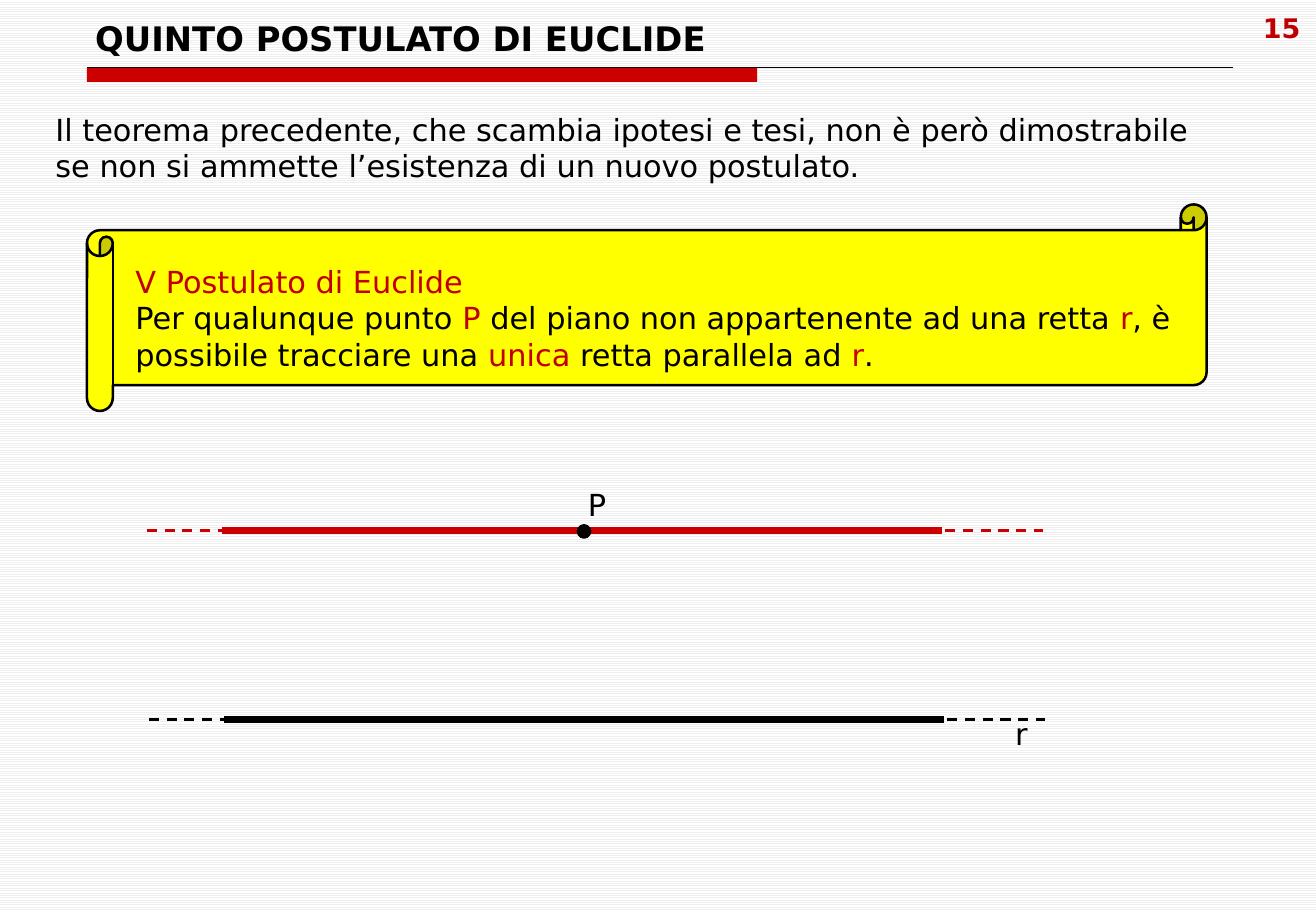
from dataclasses import dataclass

from lxml import etree
from pptx import Presentation
from pptx.dml.color import RGBColor
from pptx.enum.dml import MSO_LINE, MSO_PATTERN
from pptx.enum.shapes import MSO_CONNECTOR, MSO_SHAPE
from pptx.enum.text import MSO_ANCHOR, MSO_AUTO_SIZE, PP_ALIGN
from pptx.oxml.ns import qn
from pptx.util import Pt

EMU_PER_PX = 7620
DASH = MSO_LINE.DASH
STRAIGHT = MSO_CONNECTOR.STRAIGHT
RECTANGLE, OVAL = MSO_SHAPE.RECTANGLE, MSO_SHAPE.OVAL
SCROLL = MSO_SHAPE.HORIZONTAL_SCROLL
LEFT, CENTER = PP_ALIGN.LEFT, PP_ALIGN.CENTER
TOP, BOTTOM = MSO_ANCHOR.TOP, MSO_ANCHOR.BOTTOM


@dataclass(frozen=True)
class Theme:
    """Colours, font and type sizes of the deck."""
    font: str = "DejaVu Sans"
    ink: str = "000000"
    red: str = "CC0000"
    dark_red: str = "C00000"
    yellow: str = "FFFF00"
    paper: str = "FFFFFF"
    stripe: str = "EEEEEE"
    title: int = 20
    body: int = 18
    number: int = 16
    thin: float = 0.5
    medium: float = 1.5
    thick: float = 4.5


THEME = Theme()


def px(*lengths):
    """Turn px lengths into EMU."""
    return [length * EMU_PER_PX for length in lengths]


def rgb(colour):
    """Turn a hex string into a colour."""
    return RGBColor.from_string(colour)


def write(frame, paragraphs, size=THEME.body, bold=False, align=LEFT,
          anchor=TOP, wrap=True):
    """Fill a text frame with paragraphs of (text, colour) runs."""
    frame.word_wrap = wrap
    frame.auto_size = MSO_AUTO_SIZE.NONE
    frame.vertical_anchor = anchor
    for index, runs in enumerate(paragraphs):
        paragraph = frame.add_paragraph() if index else frame.paragraphs[0]
        paragraph.alignment = align
        for text, colour in runs:
            run = paragraph.add_run()
            run.text = text
            run.font.name = THEME.font
            run.font.size = Pt(size)
            run.font.bold = bold
            run.font.color.rgb = rgb(colour)


def add_text(slide, box, paragraphs, **style):
    """Place a text box."""
    write(slide.shapes.add_textbox(*px(*box)).text_frame, paragraphs, **style)


def add_filled(slide, kind, box, fill, outline=None):
    """Place a filled preset shape, outlined if a colour is given."""
    shape = slide.shapes.add_shape(kind, *px(*box))
    shape.shadow.inherit = False
    shape.fill.solid()
    shape.fill.fore_color.rgb = rgb(fill)
    if outline:
        shape.line.color.rgb = rgb(outline)
        shape.line.width = Pt(THEME.medium)
    else:
        shape.line.fill.background()


def add_rule(slide, left, right, y, colour, width, dash=None):
    """Draw a horizontal line."""
    rule = slide.shapes.add_connector(STRAIGHT, *px(left, y, right, y))
    rule.line.color.rgb = rgb(colour)
    rule.line.width = Pt(width)
    if dash:
        rule.line.dash_style = dash
    etree.SubElement(rule._element.spPr, qn("a:effectLst"))


def header(slide, box, title, number):
    """Place the title, the bar under it and the page number."""
    left, top, width, height = box
    bar_top = top + height
    add_rule(slide, left, left + width, bar_top, THEME.ink, THEME.thin)
    add_filled(slide, RECTANGLE, (left, bar_top, 662, 14), THEME.red)
    heading = slide.shapes.title
    heading.left, heading.top, heading.width, heading.height = px(
        left - 4, top + 12, width + 6, height - 15)
    write(heading.text_frame, [[(title, THEME.ink)]], size=THEME.title,
          bold=True, anchor=BOTTOM)
    add_text(slide, (left + width + 14, top, 68, 62),
             [[(number, THEME.dark_red)]], size=THEME.number, bold=True,
             align=CENTER)


def postulate(slide, box, paragraphs):
    """Place the scroll with the postulate written on it."""
    left, top, width, height = box
    add_filled(slide, SCROLL, box, THEME.yellow, THEME.ink)
    add_text(slide, (left + 36, top + 52, width - 49, height - 83), paragraphs)


def geometric_line(slide, left, y, colour):
    """Draw a line whose dashed ends suggest that it goes on."""
    add_rule(slide, left, left + 885, y, colour, THEME.medium, DASH)
    add_rule(slide, left + 74, left + 786, y, colour, THEME.thick)


def parallels(slide, box):
    """Draw line r and its parallel through the point P."""
    left, top, width, height = box
    bottom = top + height
    geometric_line(slide, left + 2, bottom, THEME.ink)
    geometric_line(slide, left, top, THEME.red)
    add_text(slide, (left + width - 39, bottom - 10, 37, 48),
             [[("r", THEME.ink)]], wrap=False)
    add_text(slide, (left + 424, top - 50, 42, 48),
             [[("P", THEME.ink)]], wrap=False)
    add_filled(slide, OVAL, (left + 426, top - 5, 12, 12), THEME.ink, THEME.ink)


def main():
    """Build the slide on Euclid's fifth postulate."""
    deck = Presentation()
    deck.slide_width, deck.slide_height = px(1300, 900)
    slide = deck.slides.add_slide(deck.slide_layouts[5])
    backdrop = slide.background.fill
    backdrop.patterned()
    backdrop.pattern = MSO_PATTERN.LIGHT_HORIZONTAL
    backdrop.fore_color.rgb = rgb(THEME.stripe)
    backdrop.back_color.rgb = rgb(THEME.paper)

    ink, red = THEME.ink, THEME.dark_red
    header(slide, (86, 6, 1132, 61), "QUINTO POSTULATO DI EUCLIDE", "15")
    add_text(slide, (43, 104, 1159, 84), [[(
        "Il teorema precedente, che scambia ipotesi e tesi, non è però "
        "dimostrabile se non si ammette l’esistenza di un nuovo postulato.",
        ink)]])
    postulate(slide, (86, 202, 1106, 204), [
        [("V Postulato di Euclide", red)],
        [("Per qualunque punto ", ink), ("P", red),
         (" del piano non appartenente ad una retta ", ink), ("r", red),
         (", è possibile tracciare una ", ink), ("unica", red),
         (" retta parallela ad ", ink), ("r", THEME.red), (".", ink)],
    ])
    parallels(slide, (145, 524, 885, 187))
    deck.save("out.pptx")


if __name__ == "__main__":
    main()
